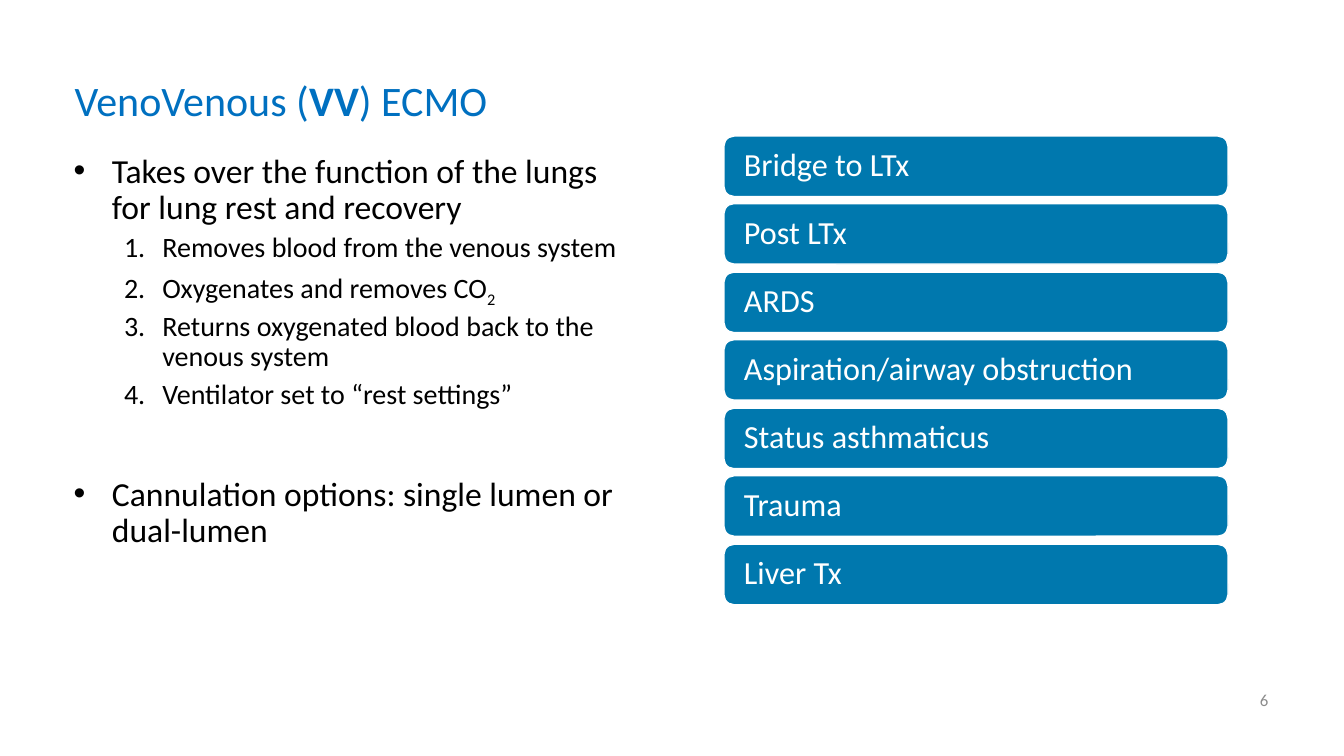
from lxml import etree
from pptx import Presentation
from pptx.dml.color import RGBColor
from pptx.enum.shapes import MSO_SHAPE
from pptx.enum.text import MSO_ANCHOR, MSO_AUTO_SIZE, PP_ALIGN
from pptx.oxml.ns import qn
from pptx.util import Emu, Pt

ROUNDED = MSO_SHAPE.ROUNDED_RECTANGLE
TOP, MIDDLE = MSO_ANCHOR.TOP, MSO_ANCHOR.MIDDLE
LEFT, RIGHT = PP_ALIGN.LEFT, PP_ALIGN.RIGHT
NO_AUTOFIT = MSO_AUTO_SIZE.NONE

EMU_PER_PX = 9144
FONT = "Calibri"
COLORS = {
    "title": "0070C0",
    "text": "000000",
    "bar": "0078AE",
    "white": "FFFFFF",
    "number": "8C8C8C",
}

FUNCTION = "Takes over the function of the lungs for lung rest and recovery"
STEPS = [
    ["Removes blood from the venous system"],
    ["Oxygenates and removes CO", "2"],
    ["Returns oxygenated blood back to the venous system"],
    ["Ventilator set to “rest settings”"],
]
CANNULATION = "Cannulation options: single lumen or dual-lumen"
INDICATIONS = [
    "Bridge to LTx",
    "Post LTx",
    "ARDS",
    "Aspiration/airway obstruction",
    "Status asthmaticus",
    "Trauma",
    "Liver Tx",
]


def px(length):
    return Emu(length * EMU_PER_PX)


def color(name):
    return RGBColor.from_string(COLORS[name])


def place(box, left, top, width, height):
    box.left, box.top, box.width, box.height = map(px, (left, top, width, height))


def set_frame(box, anchor):
    frame = box.text_frame
    frame.word_wrap = True
    frame.auto_size = NO_AUTOFIT
    frame.vertical_anchor = anchor
    return frame


def write(para, texts, size, color_name, align=LEFT):
    para.text = texts[0]
    for text in texts[1:]:
        para.add_run().text = text
    para.alignment = align
    para.line_spacing = 0.9
    for span in para.runs:
        span.font.name = FONT
        span.font.size = Pt(size)
        span.font.bold = False
        span.font.color.rgb = color(color_name)


def set_bullet(para, indent, font, tag, **attributes):
    properties = para._p.get_or_add_pPr()
    properties.set("marL", str(px(indent)))
    properties.set("indent", str(px(-38)))
    etree.SubElement(properties, qn("a:buFont")).set("typeface", font)
    etree.SubElement(properties, qn(tag), attributes)


def add_title(page):
    title = page.shapes.title
    place(title, 64, 73, 561, 59)
    para = set_frame(title, MIDDLE).paragraphs[0]
    write(para, ["VenoVenous (", "VV", ") ECMO"], 30, "title")
    para.runs[1].font.bold = True


def add_point(para, text, space_before):
    write(para, [text], 24, "text")
    para.space_before = Pt(space_before)
    set_bullet(para, 38, "Arial", "a:buChar", char="•")


def add_step(para, texts):
    write(para, texts, 20, "text")
    para.level = 1
    para.space_before = Pt(5)
    set_bullet(para, 88, "+mj-lt", "a:buAutoNum", type="arabicPeriod")
    for span in para.runs[1:]:
        span.font._element.set("baseline", "-25000")


def add_body(page):
    body = page.placeholders[1]
    place(body, 63, 148, 562, 485)
    frame = set_frame(body, TOP)
    add_point(frame.paragraphs[0], FUNCTION, 0)
    for texts in STEPS:
        add_step(frame.add_paragraph(), texts)
    add_point(frame.add_paragraph(), CANNULATION, 48)


def add_bar(page, text, top):
    bar = page.shapes.add_shape(ROUNDED, px(718), px(top), px(500), px(60))
    bar.shadow.inherit = False
    bar.fill.solid()
    bar.fill.fore_color.rgb = color("bar")
    bar.line.color.rgb = color("white")
    bar.line.width = Pt(1)
    frame = set_frame(bar, MIDDLE)
    frame.margin_left = px(17)
    write(frame.paragraphs[0], [text], 23, "white")


def add_page_number(page, number):
    box = page.shapes.add_textbox(px(968), px(676), px(300), px(40))
    para = set_frame(box, MIDDLE).paragraphs[0]
    write(para, [number], 12, "number", RIGHT)


def main():
    deck = Presentation()
    deck.slide_width, deck.slide_height = px(1333), px(750)
    page = deck.slides.add_slide(deck.slide_layouts[1])
    add_title(page)
    add_page_number(page, "6")
    add_body(page)
    for index, text in enumerate(INDICATIONS):
        add_bar(page, text, 135 + index * 135 // 2)
    deck.save("out.pptx")


if __name__ == "__main__":
    main()
